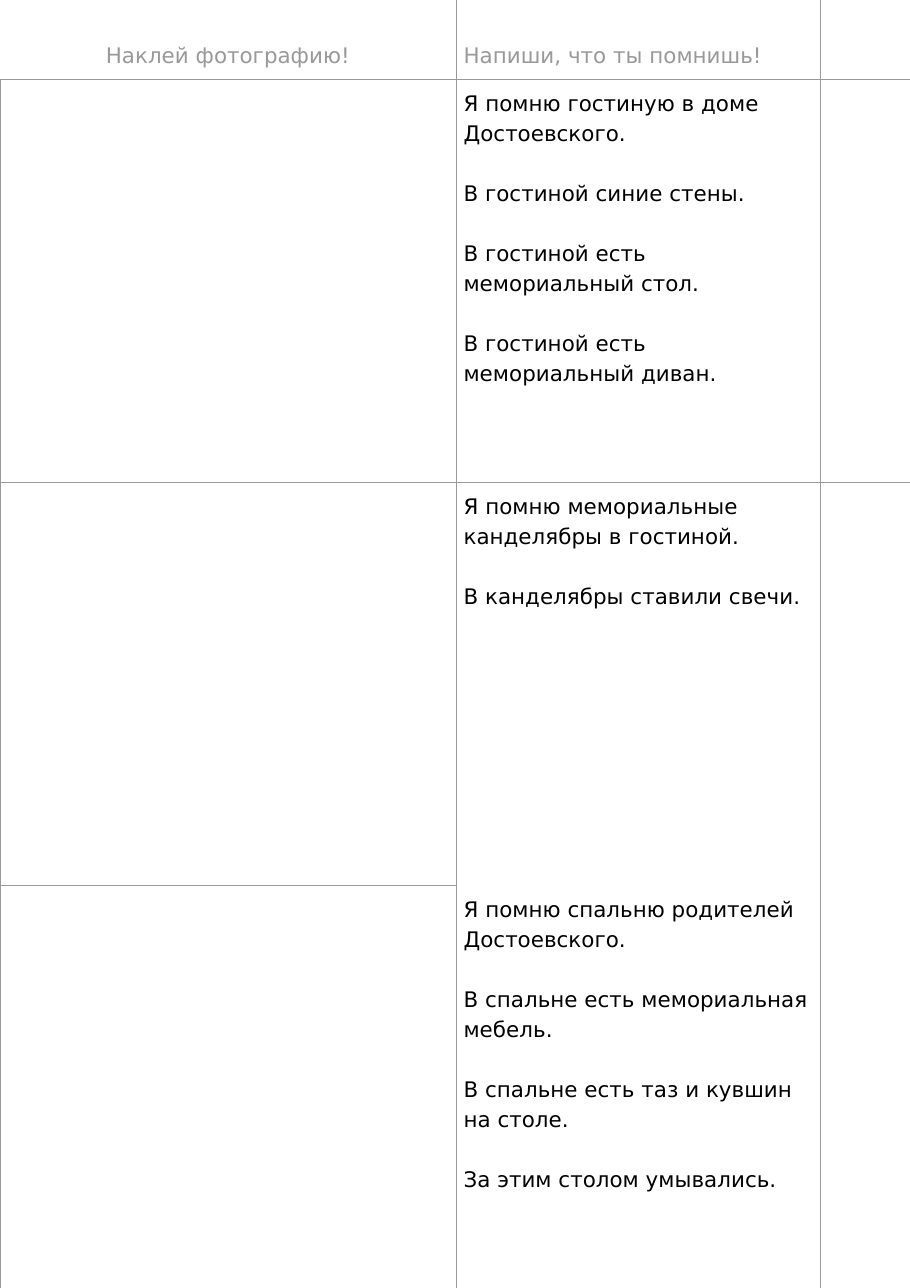
from lxml import etree
from pptx import Presentation
from pptx import util as u
from pptx.dml.color import RGBColor
from pptx.enum import text
from pptx.oxml import ns

WIDTH, HEIGHT = u.Inches(8.26), u.Inches(11.69)
COLUMN_SHARES = (0.501, 0.401, 0.099)
HEADER_SHARE = 0.0616
GRAY = RGBColor(0x99, 0x99, 0x99)
BLACK = RGBColor(0, 0, 0)
WHITE = RGBColor(0xFF, 0xFF, 0xFF)
FONT = "DejaVu Sans"
LINE_WIDTH = u.Pt(0.53)
LINE_SPACING = u.Pt(19.6)
PADDING = u.Inches(0.07)

PHOTO_HEADER = "Наклей фотографию!"
MEMORY_HEADER = "Напиши, что ты помнишь!"
MEMORIES = (
    (
        "Я помню гостиную в доме Достоевского.",
        "В гостиной синие стены.",
        "В гостиной есть мемориальный стол.",
        "В гостиной есть мемориальный диван.",
    ),
    (
        "Я помню мемориальные канделябры в гостиной.",
        "В канделябры ставили свечи.",
    ),
    (
        "Я помню спальню родителей Достоевского.",
        "В спальне есть мемориальная мебель.",
        "В спальне есть таз и кувшин\vна столе.",
        "За этим столом умывались.",
    ),
)


def set_borders(cell, visible_sides):
    """Draw gray lines on the given sides (letters of LRTB) and hide the rest."""
    properties = cell._tc.get_or_add_tcPr()
    for side in "LRTB":
        line = etree.SubElement(properties, ns.qn(f"a:ln{side}"), w=str(LINE_WIDTH))
        if side in visible_sides:
            fill = etree.SubElement(line, ns.qn("a:solidFill"))
            etree.SubElement(fill, ns.qn("a:srgbClr"), val=str(GRAY))
        else:
            etree.SubElement(line, ns.qn("a:noFill"))


def visible_sides(row, column):
    """The header is open at the top; the last two memory cells run together."""
    if row == 0:
        return {0: "RB", 1: "LRB", 2: "LRB"}[column]
    if column == 0 or row == 1:
        return "LRTB"
    return "LRT" if row == 2 else "LR"


def write_cell(cell, sentences, color, align=text.PP_ALIGN.LEFT):
    cell.margin_left = cell.margin_right = PADDING
    cell.margin_top = cell.margin_bottom = PADDING
    frame = cell.text_frame
    for index, sentence in enumerate(sentences):
        para = frame.add_paragraph() if index else frame.paragraphs[0]
        para.text = sentence
        para.alignment = align
        para.line_spacing = LINE_SPACING
        if index:
            para.space_before = LINE_SPACING
        para.font.name = FONT
        para.font.size = u.Pt(14)
        para.font.color.rgb = color


def write_header(cell, title, align):
    write_cell(cell, [title], GRAY, align)
    cell.vertical_anchor = text.MSO_ANCHOR.BOTTOM
    cell.margin_bottom = u.Inches(0.1)


def add_album_table(page):
    row_count = len(MEMORIES) + 1
    table = page.shapes.add_table(
        row_count, len(COLUMN_SHARES), 0, 0, WIDTH, HEIGHT
    ).table
    table.first_row = table.horz_banding = False
    for column, share in zip(table.columns, COLUMN_SHARES):
        column.width = int(WIDTH * share)
    header_height = int(HEIGHT * HEADER_SHARE)
    for index, row in enumerate(table.rows):
        row.height = (HEIGHT - header_height) // len(MEMORIES) if index else header_height
        for column, cell in enumerate(row.cells):
            set_borders(cell, visible_sides(index, column))
            cell.fill.solid()
            cell.fill.fore_color.rgb = WHITE
    return table


def main():
    deck = Presentation()
    deck.slide_width, deck.slide_height = WIDTH, HEIGHT
    page = deck.slides.add_slide(deck.slide_layouts[6])
    table = add_album_table(page)
    write_header(table.cell(0, 0), PHOTO_HEADER, text.PP_ALIGN.CENTER)
    write_header(table.cell(0, 1), MEMORY_HEADER, text.PP_ALIGN.LEFT)
    for row, sentences in enumerate(MEMORIES, start=1):
        write_cell(table.cell(row, 1), sentences, BLACK)
    deck.save("out.pptx")


if __name__ == "__main__":
    main()
